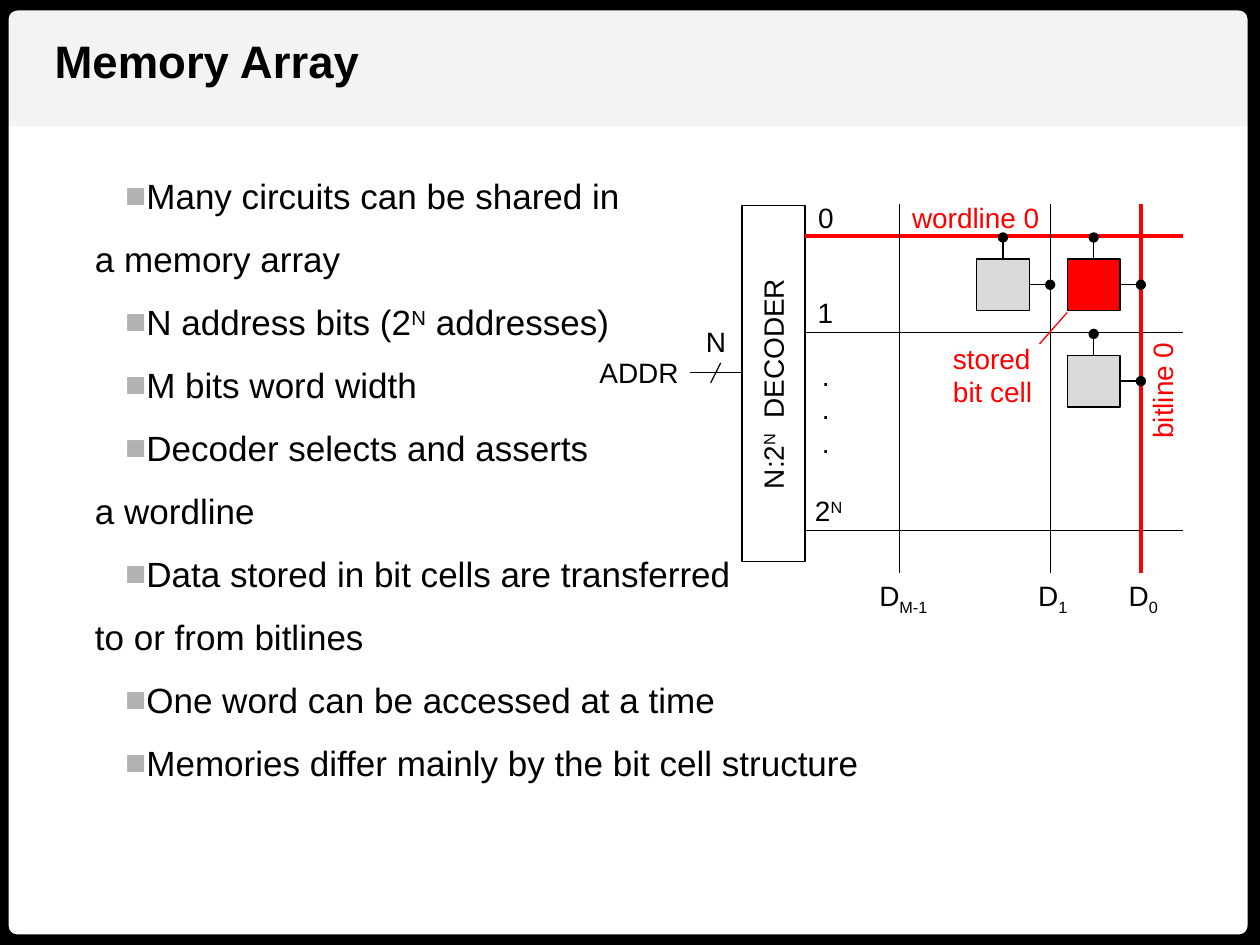
from dataclasses import dataclass
from typing import NamedTuple

from lxml.etree import SubElement
from pptx import Presentation
from pptx.dml.color import RGBColor
from pptx.enum.shapes import MSO_CONNECTOR as Connector, MSO_SHAPE as Shape
from pptx.enum.text import MSO_ANCHOR as Anchor
from pptx.oxml.ns import qn
from pptx.util import Inches, Pt

BLACK, RED, GREY, PALE, BULLET = "000000", "FF0000", "D9D9D9", "F3F3F3", "B2B2B2"
FONT = "Arial"
TOP, RIGHT = 0, 3

# The slide is a grid of 100 columns by 75 rows
deck = Presentation()
deck.slide_width, deck.slide_height = Inches(10), Inches(7.5)
COLUMN, ROW = deck.slide_width / 100, deck.slide_height / 75
page = deck.slides.add_slide(deck.slide_layouts[6])


class Area(NamedTuple):
    left: float
    top: float
    width: float
    height: float

    def lengths(self) -> tuple:
        return (round(self.left * COLUMN), round(self.top * ROW),
                round(self.width * COLUMN), round(self.height * ROW))


class Span(NamedTuple):
    text: str
    baseline: int = 0  # percent: above zero raises, below zero lowers


@dataclass
class Label:
    area: Area
    lines: list
    color: str = BLACK
    rotation: int = 0


@dataclass
class Wire:
    start: tuple
    end: tuple
    color: str = BLACK
    weight: float = 0.75


@dataclass
class BitCell:
    bitline: float
    wordline: float
    fill: str = GREY


def rgb(code: str) -> RGBColor:
    return RGBColor.from_string(code)


def add_box(area: Area, kind=Shape.RECTANGLE, fill=None, line=None, weight=0.75):
    box = page.shapes.add_shape(kind, *area.lengths())
    box.shadow.inherit = False
    if fill:
        box.fill.solid()
        box.fill.fore_color.rgb = rgb(fill)
    else:
        box.fill.background()
    if line:
        box.line.color.rgb = rgb(line)
        box.line.width = Pt(weight)
    else:
        box.line.fill.background()
    return box


def add_wire(wire: Wire, dot: bool = False):
    ends = [round(value * unit) for point in (wire.start, wire.end)
            for value, unit in zip(point, (COLUMN, ROW))]
    line = page.shapes.add_connector(Connector.STRAIGHT, *ends)
    line.line.color.rgb = rgb(wire.color)
    line.line.width = Pt(wire.weight)
    if dot:
        SubElement(line.line._get_or_add_ln(), qn("a:tailEnd"), type="oval")
    SubElement(line._element.spPr, qn("a:effectLst"))
    return line


def add_text(area: Area, lines: list, *, size=16, color=BLACK, bold=False,
             rotation=0, wrap=False, spacing=None) -> list:
    """Each line is a list of spans; the new paragraphs are returned."""
    box = page.shapes.add_textbox(*area.lengths())
    box.rotation = rotation
    frame = box.text_frame
    frame.word_wrap = wrap
    frame.vertical_anchor = Anchor.TOP
    paras = []
    for number, spans in enumerate(lines):
        para = frame.add_paragraph() if number else frame.paragraphs[0]
        if spacing:
            para.line_spacing = spacing
        for text, baseline in spans:
            span = para.add_run()
            span.text = text
            span.font.name, span.font.size, span.font.bold = FONT, Pt(size), bold
            span.font.color.rgb = rgb(color)
            if baseline:
                span._r.get_or_add_rPr().set("baseline", str(baseline * 1000))
        paras.append(para)
    return paras


def indent(para, bulleted: bool) -> None:
    properties = para._p.get_or_add_pPr()
    margin, first = (0, 0.62) if bulleted else (0.38, 0)
    properties.set("marL", str(Inches(margin)))
    properties.set("indent", str(Inches(first)))
    if bulleted:
        color = SubElement(properties, qn("a:buClr"))
        SubElement(color, qn("a:srgbClr"), val=BULLET)
        SubElement(properties, qn("a:buFont"), typeface=FONT)
        SubElement(properties, qn("a:buChar"), char="■")


def add_cell(cell: BitCell) -> None:
    area = Area(cell.bitline - 5.85, cell.wordline + 1.8, 4.2, 4.1)
    box = add_box(area, fill=cell.fill, line=BLACK)
    middle, side = area.left + area.width / 2, area.top + area.height / 2
    stem = Wire((middle, area.top), (middle, cell.wordline + 0.1))
    add_wire(stem, dot=True).begin_connect(box, TOP)
    tap = Wire((area.left + area.width, side), (cell.bitline, side))
    add_wire(tap, dot=True).begin_connect(box, RIGHT)


# Header band, frame and title
add_box(Area(0, 0, 100, 10), fill=PALE)
frame_box = add_box(Area(-0.15, 0, 100, 75), Shape.ROUNDED_RECTANGLE, line=BLACK, weight=12)
frame_box.adjustments[0] = 0.02
add_text(Area(3.35, 2.15, 26.4, 5.4), [[Span("Memory Array")]], size=26, bold=True)

# Body text: (bulleted, spans)
BODY = [
    (True, [Span("Many circuits can be shared in")]),
    (False, [Span("a memory array")]),
    (True, [Span("N address bits (2"), Span("N", 30), Span(" addresses)")]),
    (True, [Span("M bits word width")]),
    (True, [Span("Decoder selects and asserts")]),
    (False, [Span("a wordline")]),
    (True, [Span("Data stored in bit cells are transferred")]),
    (False, [Span("to or from bitlines")]),
    (True, [Span("One word can be accessed at a time")]),
    (True, [Span("Memories differ mainly by the bit cell structure")]),
]
body_paras = add_text(Area(2.75, 11.7, 93.9, 52), [spans for _, spans in BODY],
                      size=20, wrap=True, spacing=1.5)
for para, (bulleted, _) in zip(body_paras, BODY):
    indent(para, bulleted)

# Decoder with its address input
DECODER = Area(58.9, 16.3, 5, 28.3)
add_box(DECODER, line=BLACK)
add_wire(Wire((54.75, 29.55), (DECODER.left, 29.55)))
add_wire(Wire((56.4, 30.4), (57.2, 28.8)))

# Wordlines and bitlines; the active pair is red
WORDLINES = (18.75, 26.4, 42.1)
BITLINES = (90.55, 83.35, 71.4)
ACTIVE = dict(color=RED, weight=2.25)
for number, row in enumerate(WORDLINES):
    add_wire(Wire((DECODER.left + DECODER.width, row), (93.9, row),
                  **({} if number else ACTIVE)))
for number, column in enumerate(BITLINES):
    add_wire(Wire((column, 16.2), (column, 45.5), **({} if number else ACTIVE)))

# Bit cells
for cell in (BitCell(BITLINES[1], WORDLINES[0]),
             BitCell(BITLINES[0], WORDLINES[1]),
             BitCell(BITLINES[0], WORDLINES[0], RED)):
    add_cell(cell)
add_wire(Wire((82.5, 27.3), (84.7, 24.8), RED))

# Labels
LABELS = [
    Label(Area(51.9, 28.5, 18.9, 3.7),
          [[Span("N:2"), Span("N", 30), Span("  DECODER")]], rotation=270),
    Label(Area(46.6, 27.7, 8.3, 3.7), [[Span("ADDR")]]),
    Label(Area(55.05, 25.3, 3.6, 3.7), [[Span("N")]]),
    Label(Area(63.95, 15.4, 3.3, 3.7), [[Span("0")]]),
    Label(Area(63.9, 22.95, 3.3, 3.7), [[Span("1")]]),
    Label(Area(64.25, 27.95, 2.7, 9.1), [[Span(".")]] * 3),
    Label(Area(63.7, 38.7, 4.4, 3.7), [[Span("2"), Span("N", 30)]]),
    Label(Area(88.6, 45.45, 4.5, 3.7), [[Span("D"), Span("0", -25)]]),
    Label(Area(81.4, 45.45, 4.5, 3.7), [[Span("D"), Span("1", -25)]]),
    Label(Area(68.8, 45.45, 6.2, 3.7), [[Span("D"), Span("M-1", -25)]]),
    Label(Area(71.4, 15.4, 12.2, 3.7), [[Span("wordline 0")]], RED),
    Label(Area(87.4, 29.1, 9.7, 3.7), [[Span("bitline 0")]], RED, 270),
    Label(Area(74.65, 26.6, 8.9, 6.4), [[Span("stored")], [Span("bit cell")]], RED),
]
for label in LABELS:
    add_text(label.area, label.lines, color=label.color, rotation=label.rotation)

deck.save("out.pptx")
